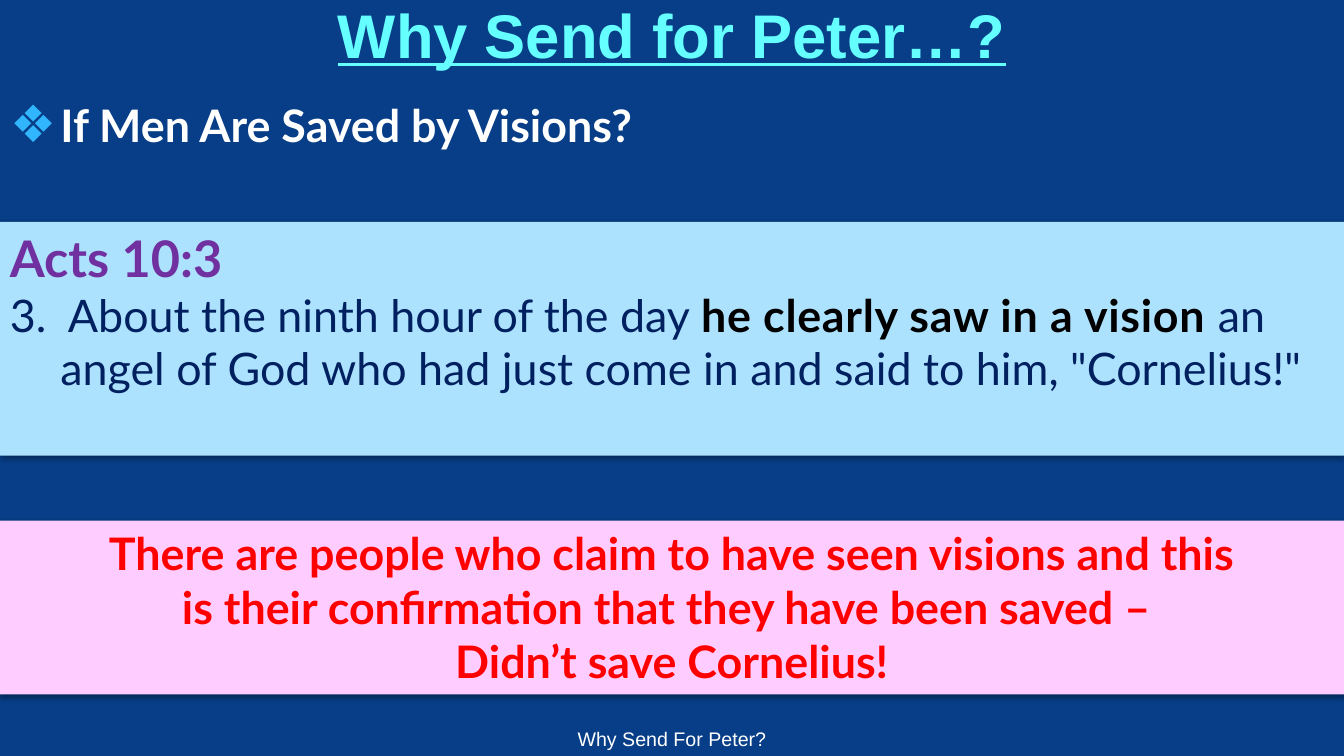
from dataclasses import dataclass

from lxml.etree import SubElement
from pptx import Presentation
from pptx.dml.color import RGBColor as RGB
from pptx.enum.shapes import MSO_SHAPE as SHAPE
from pptx.enum.text import MSO_ANCHOR as ANCHOR, MSO_AUTO_SIZE as AUTO, PP_ALIGN as ALIGN
from pptx.oxml.ns import qn
from pptx.util import Pt


@dataclass(frozen=True)
class Theme:
    back: str = "073E87"
    title: str = "66FFFF"
    light: str = "FFFFFF"
    bullet: str = "31B6FD"
    verse_fill: str = "ADE2FE"
    verse_ref: str = "7030A0"
    verse: str = "002060"
    stress: str = "000000"
    claim_fill: str = "FFCCFF"
    claim: str = "FF0000"
    shadow: str = "000000"
    head_font: str = "Arial"
    body_font: str = "Lato"
    title_size: int = 44
    ref_size: int = 36
    body_size: int = 32
    foot_size: int = 14
    hang: int = 36


class Deck:
    def __init__(self, prs, theme):
        self.theme = theme
        self.s = prs.slides.add_slide(prs.slide_layouts[1])
        self.s.background.fill.solid()
        self.s.background.fill.fore_color.rgb = RGB.from_string(theme.back)

    def place(self, sp, box, anchor=ANCHOR.TOP):
        sp.left, sp.top, sp.width, sp.height = map(Pt, box)
        tf = sp.text_frame
        tf.word_wrap = True
        tf.auto_size = AUTO.NONE
        tf.vertical_anchor = anchor
        return tf

    def para(self, tf, first, align=ALIGN.LEFT, hang=0):
        p = tf.paragraphs[0] if first else tf.add_paragraph()
        p.alignment = align
        p.space_before = Pt(0)
        pPr = p._p.get_or_add_pPr()
        pPr.set("marL", str(Pt(hang)))
        pPr.set("indent", str(-Pt(hang)))
        return p

    def run(self, p, text, color, size=None, bold=True, font=None, spacing=0):
        r = p.add_run()
        r.text = text
        r.font.name = font or self.theme.body_font
        r.font.size = Pt(size or self.theme.body_size)
        r.font.bold = bold
        r.font.color.rgb = RGB.from_string(color)
        if spacing:
            r._r.get_or_add_rPr().set("spc", str(round(spacing * 100)))
        return r

    def title(self, text, box):
        t = self.theme
        p = self.para(self.place(self.s.shapes.title, box, ANCHOR.MIDDLE), True, ALIGN.CENTER)
        self.run(p, text, t.title, t.title_size, font=t.head_font).font.underline = True

    def bullet(self, text, box):
        t = self.theme
        p = self.para(self.place(self.s.placeholders[1], box), True, hang=t.hang)
        pPr = p._p.get_or_add_pPr()
        clr = SubElement(pPr, qn("a:buClr"))
        SubElement(clr, qn("a:srgbClr"), val=t.bullet)
        SubElement(pPr, qn("a:buSzPct"), val="115000")
        SubElement(pPr, qn("a:buChar"), char="❖")
        self.run(p, text, t.light)

    def panel(self, box, fill, paragraphs, align=ALIGN.LEFT, hang=0):
        sp = self.s.shapes.add_shape(SHAPE.RECTANGLE, 0, 0, 0, 0)
        tf = self.place(sp, box)
        sp.fill.solid()
        sp.fill.fore_color.rgb = RGB.from_string(fill)
        sp.line.fill.background()
        self.soft_shadow(sp)
        for i, runs in enumerate(paragraphs):
            p = self.para(tf, i == 0, align, hang)
            for text, style in runs:
                self.run(p, text, **style)

    def soft_shadow(self, sp):
        sp.shadow.inherit = False
        effects = sp._element.spPr.find(qn("a:effectLst"))
        shadow = SubElement(effects, qn("a:outerShdw"), blurRad=str(Pt(3.1)),
                            dist=str(Pt(1.8)), dir="5400000", rotWithShape="0")
        clr = SubElement(shadow, qn("a:srgbClr"), val=self.theme.shadow)
        SubElement(clr, qn("a:alpha"), val="35000")

    def footer(self, text, box):
        t = self.theme
        tf = self.place(self.s.shapes.add_textbox(0, 0, 0, 0), box)
        p = self.para(tf, True, ALIGN.CENTER)
        self.run(p, text, t.light, t.foot_size, False, t.head_font)


def main():
    prs = Presentation()
    prs.slide_width, prs.slide_height = Pt(960), Pt(540)
    t = Theme()
    deck = Deck(prs, t)

    # Heading and question
    deck.title("Why Send for Peter…?", (0, 0, 960, 48))
    deck.bullet("If Men Are Saved by Visions?", (0, 66, 960, 46))

    # Scripture panel
    plain = dict(color=t.verse, bold=False)
    deck.panel((0, 158.4, 960, 167), t.verse_fill, [
        [("Acts 10:3", dict(color=t.verse_ref, size=t.ref_size))],
        [("3.  About the ninth hour of the day ", plain),
         ("he clearly saw in a vision", dict(color=t.stress, spacing=0.5)),
         (" an angel of God who had just come in and said to him, \"Cornelius!\"", plain)],
    ], hang=t.hang)

    # Conclusion panel
    lines = ("There are people who claim to have seen visions and this",
             "is their confirmation that they have been saved – ",
             "Didn’t save Cornelius!")
    deck.panel((0, 372, 960, 124), t.claim_fill,
               [[(line, dict(color=t.claim))] for line in lines], ALIGN.CENTER)

    # Footer
    deck.footer("Why Send For Peter?", (366, 516, 228, 24))
    prs.save("out.pptx")


if __name__ == "__main__":
    main()
